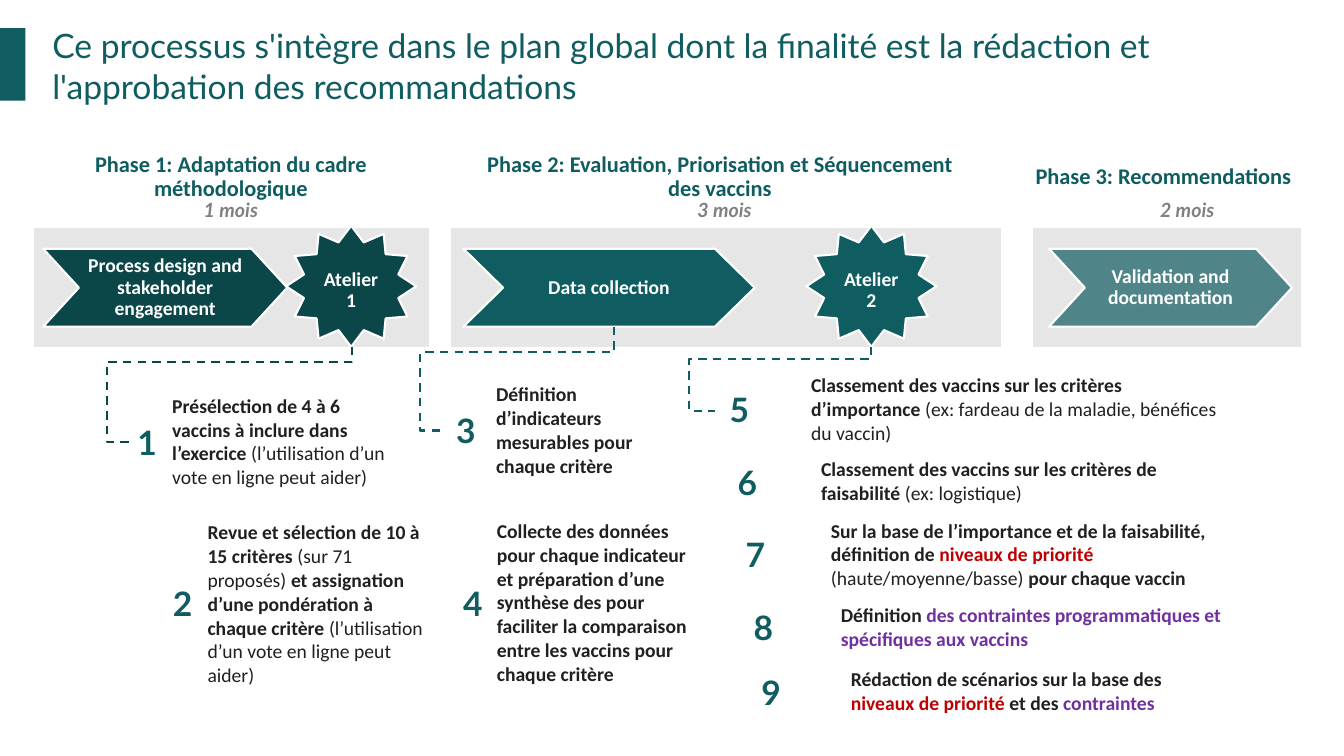
from lxml import etree
from pptx import Presentation
from pptx.dml.color import RGBColor
from pptx.enum.dml import MSO_LINE
from pptx.enum.shapes import MSO_CONNECTOR, MSO_SHAPE
from pptx.enum.text import MSO_ANCHOR, PP_ALIGN
from pptx.oxml.ns import qn
from pptx.util import Cm, Pt

RECT, CHEVRON, STAR = MSO_SHAPE.RECTANGLE, MSO_SHAPE.CHEVRON, MSO_SHAPE.STAR_12_POINT
ELBOW, DASH = MSO_CONNECTOR.ELBOW, MSO_LINE.DASH
MIDDLE, TOP = MSO_ANCHOR.MIDDLE, MSO_ANCHOR.TOP
LEFT, CENTER = PP_ALIGN.LEFT, PP_ALIGN.CENTER

COLORS = {
    "teal": "0F5D61", "dark": "0B4649", "band": "E6E6E6", "white": "FFFFFF",
    "grey": "808080", "text": "202020", "red": "C00000", "purple": "7030A0",
}
RGB = {name: RGBColor.from_string(code) for name, code in COLORS.items()}


def write(tf, paragraphs, size, font="Calibri", align=LEFT, spacing=1.0, italic=False):
    """Fill a text frame; each paragraph is a list of (text, colour, bold) runs."""
    for i, runs in enumerate(paragraphs):
        p = tf.add_paragraph() if i else tf.paragraphs[0]
        p.alignment, p.line_spacing = align, spacing
        for text, color, bold in runs:
            r = p.add_run()
            r.text = text
            formats = {"size": Pt(size), "name": font, "bold": bold, "italic": italic}
            for key, value in formats.items():
                setattr(r.font, key, value)
            r.font.color.rgb = RGB[color]


def add_box(kind, x, y, w, h, fill=None, outlined=True, insets=(0, 0), anchor=MIDDLE):
    """Add a preset shape, or a text box when kind is None; insets are side and top/bottom."""
    box = Cm(x), Cm(y), Cm(w), Cm(h)
    sp = shapes.add_shape(kind, *box) if kind else shapes.add_textbox(*box)
    if kind:
        sp.shadow.inherit = False
        sp.fill.solid()
        sp.fill.fore_color.rgb = RGB[fill]
        if outlined:
            sp.line.color.rgb, sp.line.width = RGB["white"], Pt(1.5)
        else:
            sp.line.fill.background()
    side, edge = Cm(insets[0]), Cm(insets[1])
    frame = {"word_wrap": True, "vertical_anchor": anchor, "margin_left": side,
             "margin_right": side, "margin_top": edge, "margin_bottom": edge}
    for key, value in frame.items():
        setattr(sp.text_frame, key, value)
    return sp


prs = Presentation()
prs.slide_width, prs.slide_height = Cm(33.87), Cm(19.05)
slide = prs.slides.add_slide(prs.slide_layouts[6])
shapes = slide.shapes

# Title
add_box(RECT, 0, 0.71, 0.64, 1.83, "teal", outlined=False)
title = ("Ce processus s'intègre dans le plan global dont la finalité est la rédaction et "
         "l'approbation des recommandations")
sp = add_box(None, 1.32, 0.64, 31.88, 2.03, anchor=TOP)
write(sp.text_frame, [[(title, "teal", False)]], 24, "Lato")

# Phases: band (x, w), step (text, x, w, notch, fill, opacity), heading (text, x, w), duration (text, x)
phases = [
    ((0.84, 10.01), ("Process design and stakeholder engagement", 1.09, 6.15, 0.9, "dark", 100),
     ("Phase 1: Adaptation du cadre méthodologique", 0.56, 10.52), ("1 mois", 2.34)),
    ((11.33, 13.92), ("Data collection", 11.68, 7.34, 1, "teal", 100),
     ("Phase 2: Evaluation, Priorisation et Séquencement des vaccins", 11.07, 14.15),
     ("3 mois", 14.78)),
    ((26.01, 6.81), ("Validation and documentation", 26.44, 6.12, 0.9, "teal", 70),
     ("Phase 3: Recommendations", 25.22, 8.2), ("2 mois", 26.44)),
]
STEP_H = 1.96
for band, step, heading, duration in phases:
    add_box(RECT, band[0], 5.72, band[1], 3.05, "band")

    text, x, w, notch, fill, opacity = step
    sp = add_box(CHEVRON, x, 6.27, w, STEP_H, fill, insets=(0, 0.08))
    sp.adjustments[0] = notch / STEP_H
    if opacity < 100:
        rgb = sp._element.spPr.find(f"{qn('a:solidFill')}/{qn('a:srgbClr')}")
        etree.SubElement(rgb, qn("a:alpha"), val=str(opacity * 1000))
    write(sp.text_frame, [[(text, "white", True)]], 14, align=CENTER, spacing=0.9)

    text, x, w = heading
    sp = add_box(None, x, 3.82, w, 1.3, insets=(0.76, 0.08))
    write(sp.text_frame, [[(text, "teal", True)]], 16, align=CENTER, spacing=0.9)

    text, x = duration
    sp = add_box(None, x, 4.85, 6.96, 0.74, insets=(0.25, 0.13), anchor=TOP)
    write(sp.text_frame, [[(text, "grey", True)]], 14, "Lato", CENTER, italic=True)

# Workshops
for number, x, fill in [("1", 7.21, "dark"), ("2", 20.32, "teal")]:
    sp = add_box(STAR, x, 5.69, 3.28, 3.05, fill)
    sp.text_frame.word_wrap = False
    sp.text_frame.margin_top = Cm(0.23)
    lines = [[("Atelier", "white", True)], [(number, "white", True)]]
    write(sp.text_frame, lines, 14, align=CENTER, spacing=0.9)

# Numbered tasks: x, y, column widths, row height, number alignment, rows
tables = [
    (3.33, 9.53, (0.76, 6.12), 3.23, CENTER, [
        ("1", [("Présélection de 4 à 6 vaccins à inclure dans l’exercice ", "text", True),
               ("(l’utilisation d’un vote en ligne peut aider)", "text", False)])]),
    (4.22, 13, (0.76, 6.12), 4.39, CENTER, [
        ("2", [("Revue et sélection de 10 à 15 critères ", "text", True),
               ("(sur 71 proposés) ", "text", False),
               ("et assignation d’une pondération à chaque critère ", "text", True),
               ("(l’utilisation d’un vote en ligne peut aider)", "text", False)])]),
    (11.23, 9.53, (1.02, 4.88), 2.62, CENTER, [
        ("3", [("Définition d’indicateurs mesurables pour chaque critère", "text", True)])]),
    (11.56, 12.7, (0.71, 5.59), 5, CENTER, [
        ("4", [("Collecte des données pour chaque indicateur et préparation d’une synthèse des "
                "pour faciliter la comparaison entre les vaccins pour chaque critère",
                "text", True)])]),
    (18.39, 9.3, (1.8, 10.85), 1.63, LEFT, [
        ("5", [("Classement des vaccins sur les critères d’importance ", "text", True),
               ("(ex: fardeau de la maladie, bénéfices du vaccin)", "text", False)]),
        ("6", [("Classement des vaccins sur les critères de faisabilité ", "text", True),
               ("(ex: logistique)", "text", False)]),
        ("7", [("Sur la base de l’importance et de la faisabilité, définition de ", "text", True),
               ("niveaux de priorité ", "red", True),
               ("(haute/moyenne/basse) ", "text", False),
               ("pour chaque vaccin", "text", True)]),
        ("8", [("Définition ", "text", True),
               ("des contraintes programmatiques et spécifiques aux vaccins", "purple", True)]),
        ("9", [("Rédaction de scénarios sur la base des ", "text", True),
               ("niveaux de priorité ", "red", True),
               ("et des ", "text", True),
               ("contraintes", "purple", True)])]),
]
for x, y, widths, row_h, align, rows in tables:
    table = shapes.add_table(len(rows), 2, Cm(x), Cm(y), Cm(sum(widths)),
                             Cm(row_h * len(rows))).table
    for column, width in zip(table.columns, widths):
        column.width = Cm(width)
    for i, (number, runs) in enumerate(rows):
        number_cell, task_cell = table.cell(i, 0), table.cell(i, 1)
        for cell in (number_cell, task_cell):
            cell.fill.solid()
            cell.fill.fore_color.rgb = RGB["white"]
            cell.vertical_anchor = MIDDLE
        for side in ("right", "top", "bottom"):
            setattr(number_cell, f"margin_{side}", 0)
        number_cell.margin_left = Cm(0.2 * i)
        task_cell.margin_left = Cm(0.25 * (i + 1))
        write(number_cell.text_frame, [[(number, "teal", True)]], 24, "Lato", align)
        write(task_cell.text_frame, [runs], 14)

# Dashed links: start, end, first drop, colour
OVERHANG = 0.64
links = [
    ((8.86, 8.74), (3.33, 11.13), 0.39, "dark"),
    ((15.47, 8.23), (11.23, 10.85), 0.65, "teal"),
    ((21.95, 8.74), (18.01, 10.36), 0.31, "teal"),
]
for (x1, y1), (x2, y2), drop, color in links:
    run, fall = x1 - x2, y2 - y1
    mid_x, mid_y = (x1 + x2) / 2, (y1 + y2) / 2
    # The frame is laid on its side, then turned a quarter clockwise
    link = shapes.add_connector(ELBOW, Cm(mid_x - fall / 2), Cm(mid_y - run / 2),
                                Cm(mid_x + fall / 2), Cm(mid_y + run / 2))
    link.line.color.rgb, link.line.width, link.line.dash_style = RGB[color], Pt(1.5), DASH
    props = link._element.spPr
    props.find(qn("a:xfrm")).set("rot", "5400000")
    geometry = props.find(qn("a:prstGeom"))
    geometry.set("prst", "bentConnector4")
    guides = geometry.find(qn("a:avLst"))
    for name, ratio in (("adj1", drop / fall), ("adj2", 1 + OVERHANG / run)):
        etree.SubElement(guides, qn("a:gd"), name=name, fmla=f"val {round(ratio * 100000)}")
    etree.SubElement(props, qn("a:effectLst"))

prs.save("out.pptx")
